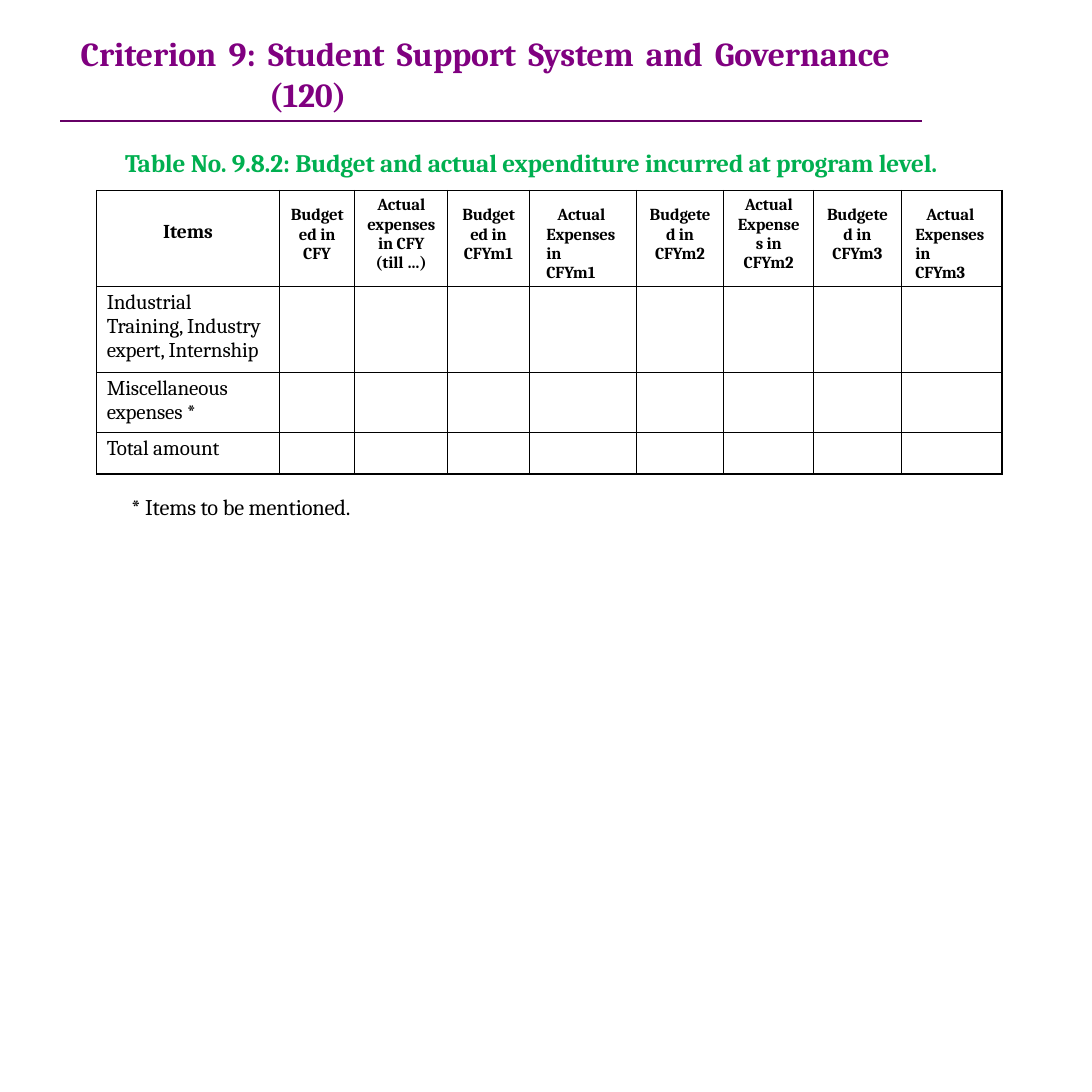
import dataclasses

import pptx
import pptx.dml.color
import pptx.enum.shapes
import pptx.enum.text
import pptx.oxml
import pptx.oxml.ns
import pptx.util
from pptx.util import Inches

ALIGN = pptx.enum.text.PP_ALIGN


@dataclasses.dataclass(frozen=True)
class Theme:
    font: str = "Cambria"
    title: str = "800080"
    rule: str = "660066"
    caption: str = "00AF50"
    ink: str = "000000"
    title_size: int = 24
    caption_size: int = 18
    note_size: int = 16
    item_size: int = 15
    corner_size: int = 14
    head_size: int = 12


THEME = Theme()
COLUMNS = [1.81, 0.75, 0.92, 0.81, 1.06, 0.87, 0.89, 0.87, 1]
ROWS = [0.94, 0.85, 0.6, 0.41]
# Heading, side margin, top margin, first-line indent (None for centred text)
HEADINGS = [
    ("Budgeted in CFY", 0.1, 0.15, None),
    ("Actual expenses in CFY (till …)", 0.11, 0.05, None),
    ("Budgeted in CFYm1", 0.13, 0.15, None),
    ("Actual Expenses in\vCFYm1", 0.17, 0.15, 0.11),
    ("Budgeted in CFYm2", 0.12, 0.15, None),
    ("Actual Expenses in CFYm2", 0.13, 0.05, None),
    ("Budgeted in CFYm3", 0.12, 0.15, None),
    ("Actual Expenses in\vCFYm3", 0.14, 0.15, 0.11),
]
ITEMS = [
    "Industrial Training, Industry expert, Internship",
    "Miscellaneous expenses *",
    "Total amount",
]


def set_format(target, values):
    for name, value in values.items():
        setattr(target, name, value)


def set_margins(target, left, top, right, bottom=0):
    set_format(target, {
        "margin_left": Inches(left), "margin_top": Inches(top),
        "margin_right": Inches(right), "margin_bottom": Inches(bottom),
    })


def write(frame, text, size, color, bold=False, align=ALIGN.LEFT, left=0, first=0):
    """Fill the first paragraph; left and first are its indents in inches."""
    frame.word_wrap = True
    para = frame.paragraphs[0]
    para.text = text
    para.alignment = align
    layout = para._p.get_or_add_pPr()
    layout.set("marL", str(Inches(left)))
    layout.set("indent", str(Inches(first)))
    for span in para.runs:
        set_format(span.font, {
            "name": THEME.font, "size": pptx.util.Pt(size), "bold": bold,
        })
        span.font.color.rgb = pptx.dml.color.RGBColor.from_string(color)
        span._r.get_or_add_rPr().set("spc", "-10")


def add_text(page, place, text, size, color, right=0, **style):
    box = page.shapes.add_textbox(*map(Inches, place))
    set_margins(box.text_frame, 0, 0.02, right)
    write(box.text_frame, text, size, color, **style)


def add_rule(page, left, right, top):
    rule = page.shapes.add_connector(
        pptx.enum.shapes.MSO_CONNECTOR.STRAIGHT,
        Inches(left), Inches(top), Inches(right), Inches(top))
    rule.line.color.rgb = pptx.dml.color.RGBColor.from_string(THEME.rule)
    rule.line.width = pptx.util.Pt(1.25)
    rule._element.spPr.append(pptx.oxml.parse_xml(
        f"<a:effectLst {pptx.oxml.ns.nsdecls('a')}/>"))


def add_borders(cell):
    cell.fill.background()
    properties = cell._tc.get_or_add_tcPr()
    for position, side in enumerate(("lnL", "lnR", "lnT", "lnB")):
        properties.insert(position, pptx.oxml.parse_xml(
            f'<a:{side} {pptx.oxml.ns.nsdecls("a")} w="12700"><a:solidFill>'
            f'<a:srgbClr val="{THEME.ink}"/></a:solidFill></a:{side}>'))


def add_budget_table(page):
    table = page.shapes.add_table(
        len(ROWS), len(COLUMNS), Inches(0.96), Inches(1.89),
        Inches(sum(COLUMNS)), Inches(sum(ROWS))).table
    set_format(table, {"first_row": False, "horz_banding": False})
    for column, width in zip(table.columns, COLUMNS):
        column.width = Inches(width)
    for row, height in zip(table.rows, ROWS):
        row.height = Inches(height)
    for cell in table.iter_cells():
        set_margins(cell, 0, 0, 0)
        add_borders(cell)

    corner = table.cell(0, 0)
    set_margins(corner, 0, 0.3, 0)
    write(corner.text_frame, "Items", THEME.corner_size, THEME.ink,
          bold=True, align=ALIGN.CENTER)
    for index, (text, side, top, first) in enumerate(HEADINGS, start=1):
        cell = table.cell(0, index)
        set_margins(cell, side, top, side)
        write(cell.text_frame, text, THEME.head_size, THEME.ink, bold=True,
              align=ALIGN.CENTER if first is None else ALIGN.LEFT,
              first=first or 0)
    for index, text in enumerate(ITEMS, start=1):
        cell = table.cell(index, 0)
        set_margins(cell, 0.1, 0.04, 0.12)
        write(cell.text_frame, text, THEME.item_size, THEME.ink)


def main():
    deck = pptx.Presentation()
    set_format(deck, {"slide_width": Inches(10.83), "slide_height": Inches(10.83)})
    page = deck.slides.add_slide(deck.slide_layouts[6])
    add_text(page, (1.24, 1.44, 8.39, 0.33),
             "Table No. 9.8.2: Budget and actual expenditure incurred at program level.",
             THEME.caption_size, THEME.caption, bold=True)
    add_text(page, (1.3, 4.87, 2.35, 0.3), "* Items to be mentioned.",
             THEME.note_size, THEME.ink)
    add_budget_table(page)
    add_text(page, (0.79, 0.31, 8.35, 0.83),
             "Criterion 9: Student Support System and Governance (120)",
             THEME.title_size, THEME.title, right=0.32, bold=True,
             align=ALIGN.JUSTIFY, left=1.88, first=-1.87)
    add_rule(page, 0.6, 9.14, 1.2)
    deck.save("out.pptx")


if __name__ == "__main__":
    main()
